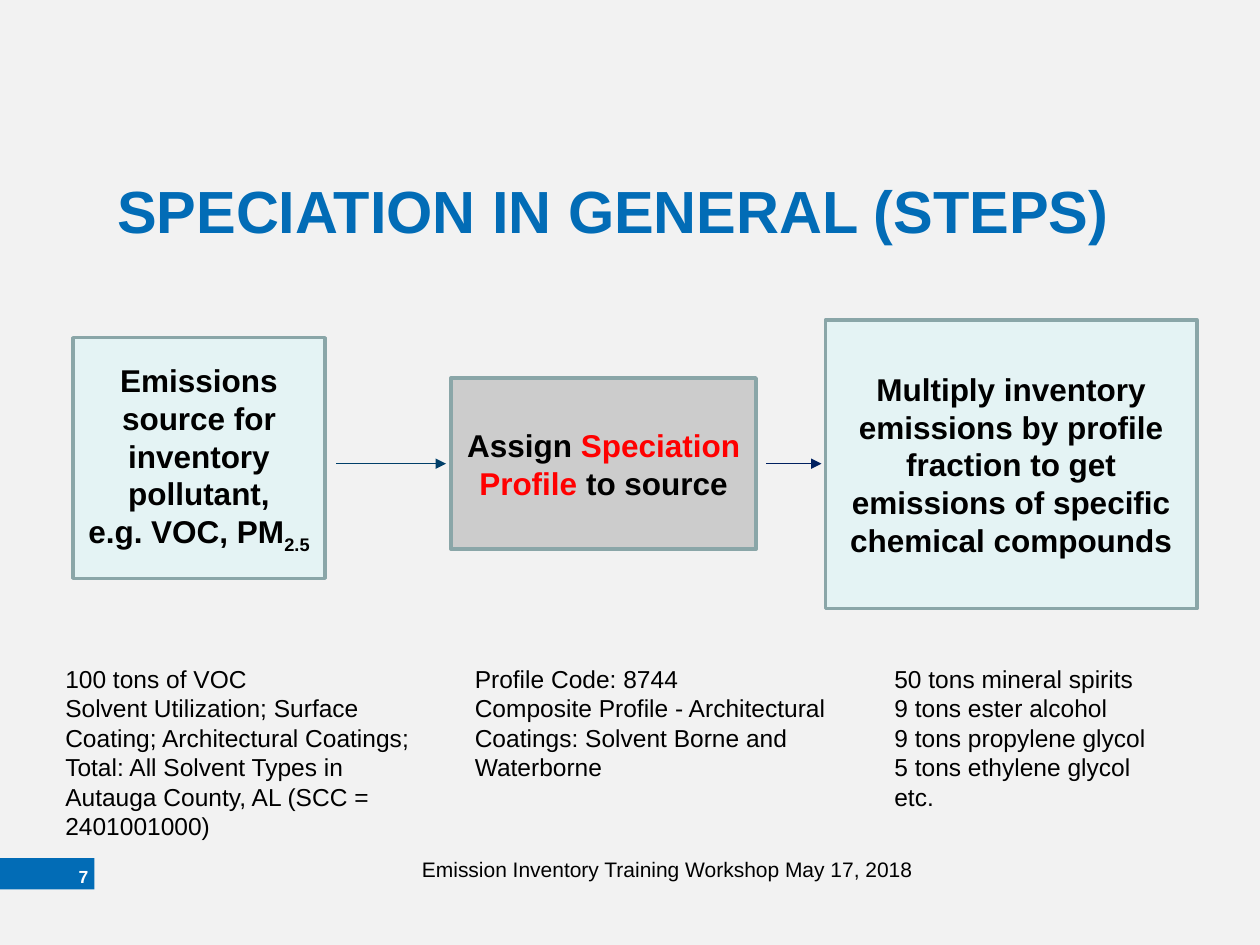
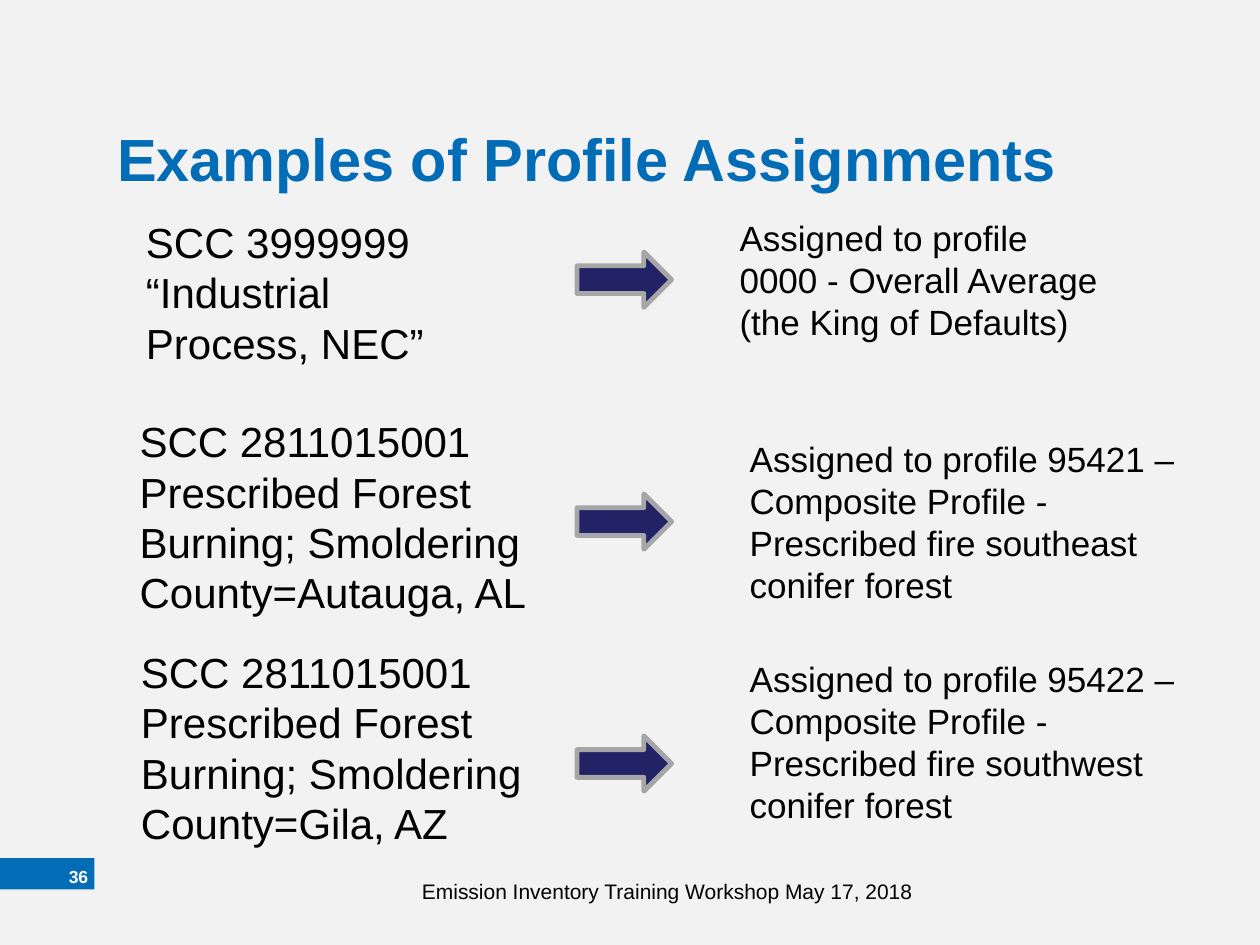
from typing import NamedTuple

from lxml.etree import SubElement
from pptx import Presentation
from pptx.dml.color import RGBColor
from pptx.enum.shapes import MSO_CONNECTOR as Connector, MSO_SHAPE as Shape
from pptx.enum.text import MSO_ANCHOR as Anchor, PP_ALIGN as Align
from pptx.oxml.ns import qn
from pptx.util import Inches, Pt

FONT = "Arial"
PALE_GRAY = RGBColor(0xF2, 0xF2, 0xF2)
BLUE = RGBColor(0x02, 0x6C, 0xB6)
BLACK = RGBColor(0, 0, 0)
WHITE = RGBColor(0xFF, 0xFF, 0xFF)
RED = RGBColor(0xFF, 0, 0)
PALE_TEAL = RGBColor(0xE4, 0xF3, 0xF4)
STEP_GRAY = RGBColor(0xCC, 0xCC, 0xCC)
STEP_BORDER = RGBColor(0x8A, 0xA6, 0xA8)
FLOW_BLUE = RGBColor(0x00, 0x3F, 0x69)
FLOW_NAVY = RGBColor(0x00, 0x20, 0x60)
ARROW_NAVY = RGBColor(0x22, 0x22, 0x67)
ARROW_BORDER = RGBColor(0xA6, 0xA6, 0xA6)

FOOTER = "Emission Inventory Training Workshop May 17, 2018"
NO_BREAK_SPACE = chr(160)
FLOW_Y = 3.68
EXAMPLE_TOP = 5.22
ASSIGNMENT_INDENT = 0.31
ARROW_LEFT, ARROW_TOP, ARROW_PITCH = 4.58, 2, 1.92


class Box(NamedTuple):
    left: float
    top: float
    width: float
    height: float

    def lengths(self):
        return [Inches(value) for value in self]


class Piece(NamedTuple):
    text: str
    color: RGBColor = BLACK
    subscript: bool = False


class Step(NamedTuple):
    box: Box
    fill: RGBColor
    pieces: list[Piece]


class Flow(NamedTuple):
    start: float
    end: float
    color: RGBColor


class Example(NamedTuple):
    left: float
    width: float
    lines: list[str]


class Assignment(NamedTuple):
    source_box: Box
    source_lines: list[str]
    profile_box: Box
    profile: str


STEPS = [
    Step(Box(0.58, 2.68, 2, 1.91), PALE_TEAL,
         [Piece("Emissions source for inventory pollutant, "
                f"e.g.{NO_BREAK_SPACE}VOC, PM"),
          Piece("2.5", subscript=True)]),
    Step(Box(3.58, 3, 2.42, 1.36), STEP_GRAY,
         [Piece("Assign "), Piece("Speciation Profile ", RED),
          Piece("to source")]),
    Step(Box(6.55, 2.54, 2.95, 2.29), PALE_TEAL,
         [Piece("Multiply inventory emissions by profile fraction to get "
                "emissions of specific chemical compounds")]),
]
FLOWS = [Flow(2.67, 3.54, FLOW_BLUE), Flow(6.08, 6.52, FLOW_NAVY)]
EXAMPLES = [
    Example(0.42, 3.17,
            ["100 tons of VOC",
             "Solvent Utilization; Surface Coating; Architectural Coatings; "
             "Total: All Solvent Types in Autauga County, AL "
             "(SCC = 2401001000)"]),
    Example(3.67, 3,
            ["Profile Code: 8744",
             "Composite Profile - Architectural Coatings: Solvent Borne and "
             "Waterborne"]),
    Example(7, 2.33,
            ["50 tons mineral spirits", "9 tons ester alcohol",
             "9 tons propylene glycol", "5 tons ethylene glycol", "etc."]),
]
BURNING = ["SCC 2811015001", "Prescribed Forest Burning; Smoldering"]
ASSIGNMENTS = [
    Assignment(Box(1.06, 1.67, 2.88, 1.4),
               ["SCC 3999999 “Industrial Process, NEC”"],
               Box(5.46, 1.67, 3.4, 1.1),
               "Assigned to profile 0000 - Overall Average "
               "(the King of Defaults)"),
    Assignment(Box(1.01, 3.25, 3.44, 1.72),
               BURNING + ["County=Autauga, AL"],
               Box(5.54, 3.42, 4.22, 1.45),
               "Assigned to profile 95421 – Composite Profile - "
               "Prescribed fire southeast conifer forest"),
    Assignment(Box(1.02, 5.08, 3.31, 1.72),
               BURNING + ["County=Gila, AZ"],
               Box(5.54, 5.17, 4.22, 1.45),
               "Assigned to profile 95422 – Composite Profile - "
               "Prescribed fire southwest conifer forest"),
]


def add_run(paragraph, piece: Piece, size: float, bold: bool = False) -> None:
    run = paragraph.add_run()
    run.text = piece.text
    run.font.name = FONT
    run.font.size = Pt(size)
    run.font.bold = bold
    run.font.color.rgb = piece.color
    if piece.subscript:
        run._r.get_or_add_rPr().set("baseline", "-25000")


def add_text(slide, box: Box, lines: list[str], size: float,
             indent: float = 0) -> None:
    frame = slide.shapes.add_textbox(*box.lengths()).text_frame
    frame.word_wrap = True
    frame.margin_left = Inches(0.1 + indent)
    for index, line in enumerate(lines):
        paragraph = frame.add_paragraph() if index else frame.paragraphs[0]
        add_run(paragraph, Piece(line), size)


def add_filled(slide, kind: Shape, box: Box, fill: RGBColor,
               border: RGBColor | None = None, weight: float = 0):
    shape = slide.shapes.add_shape(kind, *box.lengths())
    shape.shadow.inherit = False
    shape.fill.solid()
    shape.fill.fore_color.rgb = fill
    if border is None:
        shape.line.fill.background()
    else:
        shape.line.color.rgb = border
        shape.line.width = Pt(weight)
    return shape


def add_step(slide, step: Step) -> None:
    shape = add_filled(slide, Shape.RECTANGLE, step.box, step.fill,
                       STEP_BORDER, 2)
    frame = shape.text_frame
    frame.word_wrap = True
    frame.vertical_anchor = Anchor.MIDDLE
    frame.paragraphs[0].alignment = Align.CENTER
    for piece in step.pieces:
        add_run(frame.paragraphs[0], piece, 18, bold=True)


def add_flow(slide, flow: Flow) -> None:
    connector = slide.shapes.add_connector(
        Connector.STRAIGHT, Inches(flow.start), Inches(FLOW_Y),
        Inches(flow.end), Inches(FLOW_Y))
    connector.line.color.rgb = flow.color
    connector.line.width = Pt(0.75)
    SubElement(connector.line._get_or_add_ln(), qn("a:tailEnd"),
               type="triangle")
    SubElement(connector._element.spPr, qn("a:effectLst"))


def add_slide(prs, title: str, title_box: Box, number: int,
              footer_top: float):
    """Add a slide with its title, background, number band and footer."""
    slide = prs.slides.add_slide(prs.slide_layouts[5])
    slide.background.fill.solid()
    slide.background.fill.fore_color.rgb = PALE_GRAY

    heading = slide.shapes.title
    heading.left, heading.top, heading.width, heading.height = (
        title_box.lengths())
    heading.text_frame.vertical_anchor = Anchor.TOP
    heading.text_frame.paragraphs[0].alignment = Align.LEFT
    add_run(heading.text_frame.paragraphs[0], Piece(title, BLUE), 34,
            bold=True)

    add_filled(slide, Shape.RECTANGLE, Box(0, 6.81, 0.75, 0.25), BLUE)
    number_box = Box(0.03, 6.83, 0.67, 0.25)
    frame = slide.shapes.add_textbox(*number_box.lengths()).text_frame
    frame.margin_left = frame.margin_right = 0
    frame.margin_top = frame.margin_bottom = 0
    frame.word_wrap = True
    frame.vertical_anchor = Anchor.MIDDLE
    frame.paragraphs[0].alignment = Align.RIGHT
    add_run(frame.paragraphs[0], Piece(str(number), WHITE), 10, bold=True)

    add_text(slide, Box(3.25, footer_top, 6.75, 0.5), [FOOTER], 12)
    return slide


def add_steps_slide(prs) -> None:
    slide = add_slide(prs, "SPECIATION IN GENERAL (STEPS)",
                      Box(0.83, 1.33, 8.33, 1.08), 7, 6.75)
    for step in STEPS:
        add_step(slide, step)
    for flow in FLOWS:
        add_flow(slide, flow)
    for example in EXAMPLES:
        add_text(slide, Box(example.left, EXAMPLE_TOP, example.width, 1.28),
                 example.lines, 14)


def add_assignments_slide(prs) -> None:
    slide = add_slide(prs, "Examples of Profile Assignments",
                      Box(0.83, 0.92, 8.33, 0.73), 36, 6.92)
    for row, assignment in enumerate(ASSIGNMENTS):
        add_text(slide, assignment.source_box, assignment.source_lines, 24)
        arrow_box = Box(ARROW_LEFT, ARROW_TOP + row * ARROW_PITCH, 0.75, 0.44)
        add_filled(slide, Shape.RIGHT_ARROW, arrow_box, ARROW_NAVY,
                   ARROW_BORDER, 2.75)
        add_text(slide, assignment.profile_box, [assignment.profile], 20,
                 indent=ASSIGNMENT_INDENT)


def main() -> None:
    prs = Presentation()
    prs.slide_width, prs.slide_height = Inches(10), Inches(7.5)
    add_steps_slide(prs)
    add_assignments_slide(prs)
    prs.save("out.pptx")


if __name__ == "__main__":
    main()
